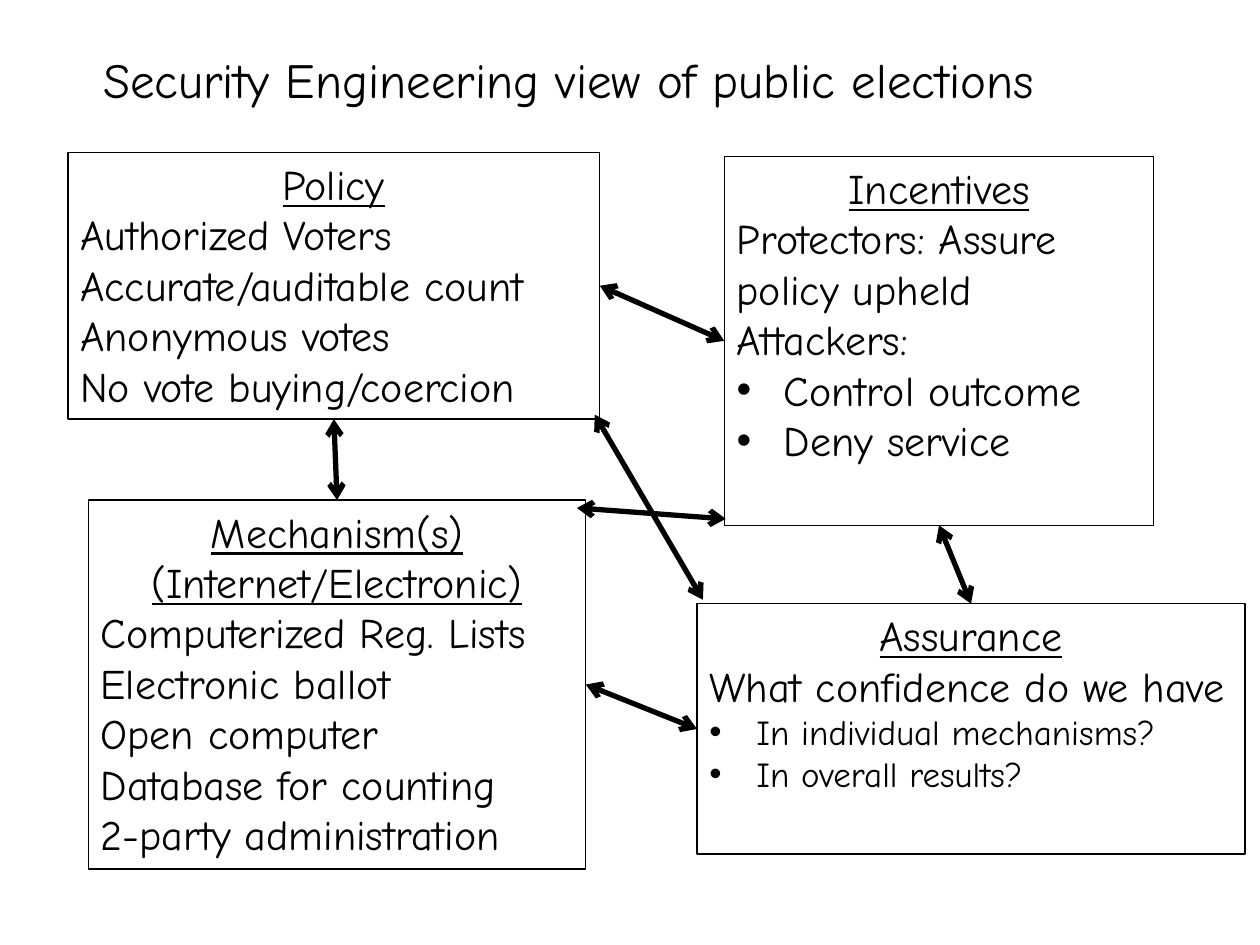
import pptx
import pptx.dml.color
import pptx.enum.shapes
import pptx.enum.text
import pptx.oxml.ns
import pptx.util
from lxml import etree
from pptx.util import Cm, Pt

THEME = {
    "font": "Comic Neue",
    "ink": pptx.dml.color.RGBColor(0, 0, 0),
    "title": Pt(28),
    "body": Pt(24),
    "detail": Pt(20),
    "outline": Pt(0.75),
    "arrow": Pt(3),
    "indent": Cm(0.95),
}

TITLE = "Security Engineering view of public elections"
TITLE_AREA = (1.83, 0, 21.6, 3.18)

# area is left, top, width, height in cm
TOPICS = {
    "Policy": {
        "area": (1.37, 3.07, 10.72, 5.38),
        "lines": ["Authorized Voters", "Accurate/auditable count",
                  "Anonymous votes", "No vote buying/coercion"],
    },
    "Mechanism(s) (Internet/Electronic)": {
        "area": (1.78, 10.08, 10.03, 7.44),
        "lines": ["Computerized Reg. Lists", "Electronic ballot", "Open computer",
                  "Database for counting", "2-party administration"],
    },
    "Incentives": {
        "area": (14.6, 3.15, 8.66, 7.44),
        "lines": ["Protectors: Assure policy upheld", "Attackers:"],
        "bullets": ["Control outcome", "Deny service"],
        "bullet_size": "body",
    },
    "Assurance": {
        "area": (14.05, 12.17, 11.05, 5.05),
        "lines": ["What confidence do we have"],
        "bullets": ["In individual mechanisms?", "In overall results?"],
        "bullet_size": "detail",
    },
}
POLICY, MECHANISM, INCENTIVES, ASSURANCE = TOPICS

TOP, LEFT, BOTTOM, RIGHT = range(4)
SIDE_LINKS = [
    (INCENTIVES, LEFT, POLICY, RIGHT),
    (ASSURANCE, LEFT, MECHANISM, RIGHT),
    (POLICY, BOTTOM, MECHANISM, TOP),
    (INCENTIVES, BOTTOM, ASSURANCE, TOP),
]
# Corner to corner, x1, y1, x2, y2 in cm
CORNER_LINKS = [
    (14.63, 10.46, 11.63, 10.24),
    (11.99, 8.36, 14.17, 12.09),
]


def add_xml(parent, tag, **attributes):
    return etree.SubElement(parent, pptx.oxml.ns.qn(tag), attributes)


def style_text(paragraph, text, size):
    paragraph.text = text
    paragraph.font.name = THEME["font"]
    paragraph.font.size = THEME[size]
    paragraph.font.color.rgb = THEME["ink"]


def add_bullet(paragraph):
    properties = paragraph._p.get_or_add_pPr()
    properties.set("marL", str(THEME["indent"]))
    properties.set("indent", str(-THEME["indent"]))
    bullet_font = pptx.oxml.ns.qn("a:buFont")
    bullet_char = pptx.oxml.ns.qn("a:buChar")
    # Bullet settings come before the default run properties
    properties.insert(0, etree.Element(bullet_font, typeface="Arial"))
    properties.insert(1, etree.Element(bullet_char, char="•"))


def add_title(slide):
    frame = slide.shapes.add_textbox(*map(Cm, TITLE_AREA)).text_frame
    frame.word_wrap = True
    frame.vertical_anchor = pptx.enum.text.MSO_ANCHOR.MIDDLE
    style_text(frame.paragraphs[0], TITLE, "title")


def add_topic(slide, heading, topic):
    box = slide.shapes.add_shape(
        pptx.enum.shapes.MSO_SHAPE.RECTANGLE, *map(Cm, topic["area"]))
    box.shadow.inherit = False
    box.fill.background()
    box.line.color.rgb = THEME["ink"]
    box.line.width = THEME["outline"]

    frame = box.text_frame
    frame.word_wrap = True
    frame.vertical_anchor = pptx.enum.text.MSO_ANCHOR.TOP
    title = frame.paragraphs[0]
    style_text(title, heading, "body")
    title.font.underline = True
    title.alignment = pptx.enum.text.PP_ALIGN.CENTER

    for line in topic["lines"]:
        paragraph = frame.add_paragraph()
        style_text(paragraph, line, "body")
        paragraph.alignment = pptx.enum.text.PP_ALIGN.LEFT
    for bullet in topic.get("bullets", []):
        paragraph = frame.add_paragraph()
        style_text(paragraph, bullet, topic["bullet_size"])
        paragraph.alignment = pptx.enum.text.PP_ALIGN.LEFT
        add_bullet(paragraph)
    return box


def add_arrow(slide, x1=0, y1=0, x2=0, y2=0):
    """Add a double-headed arrow; its ends are in cm."""
    arrow = slide.shapes.add_connector(
        pptx.enum.shapes.MSO_CONNECTOR.STRAIGHT, *map(Cm, (x1, y1, x2, y2)))
    arrow.line.color.rgb = THEME["ink"]
    arrow.line.width = THEME["arrow"]
    outline = arrow.line._get_or_add_ln()
    for end in ("a:headEnd", "a:tailEnd"):
        add_xml(outline, end, type="arrow")
    add_xml(arrow._element.spPr, "a:effectLst")
    return arrow


def main():
    deck = pptx.Presentation()
    deck.slide_width, deck.slide_height = Cm(25.4), Cm(19.05)
    slide = deck.slides.add_slide(deck.slide_layouts[6])

    add_title(slide)
    boxes = {heading: add_topic(slide, heading, topic)
             for heading, topic in TOPICS.items()}
    for start, start_side, end, end_side in SIDE_LINKS:
        arrow = add_arrow(slide)
        arrow.begin_connect(boxes[start], start_side)
        arrow.end_connect(boxes[end], end_side)
    for ends in CORNER_LINKS:
        add_arrow(slide, *ends)

    deck.save("out.pptx")


if __name__ == "__main__":
    main()
